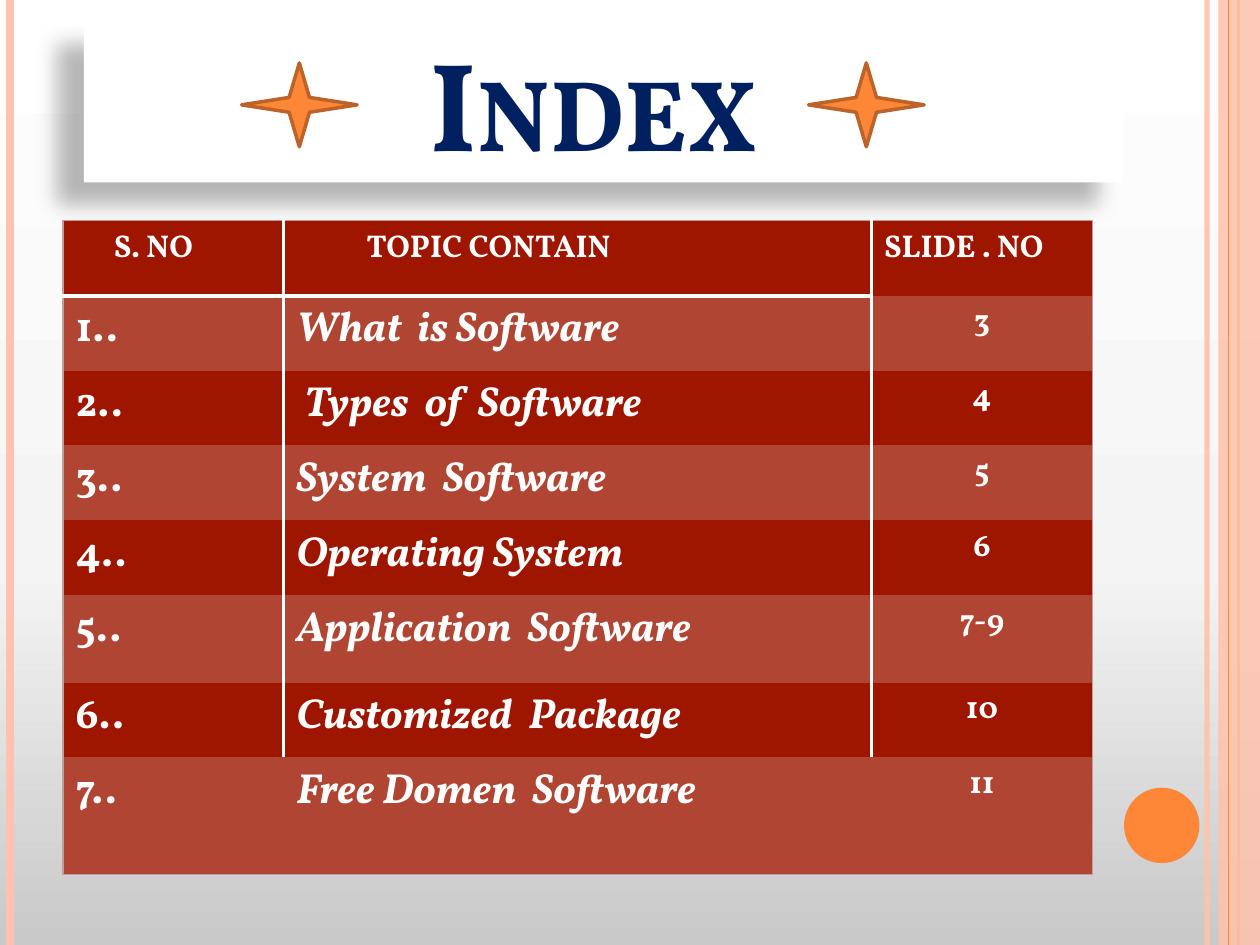
from typing import NamedTuple, Optional

from lxml.etree import SubElement
from pptx import Presentation
from pptx.dml.color import RGBColor
from pptx.enum.shapes import MSO_CONNECTOR, MSO_SHAPE
from pptx.enum.text import MSO_ANCHOR as Anchor, PP_ALIGN as Align
from pptx.oxml.ns import qn
from pptx.util import Cm, Pt

FONT = "Vollkorn"
WHITE = RGBColor(0xFF, 0xFF, 0xFF)
NAVY = RGBColor(0x00, 0x20, 0x60)
PEACH = RGBColor(0xFE, 0xC3, 0xAE)
ORANGE = RGBColor(0xFE, 0x86, 0x37)
BROWN = RGBColor(0xBC, 0x63, 0x29)
DARK_RED = RGBColor(0x9E, 0x16, 0x00)
LIGHT_RED = RGBColor(0xB1, 0x45, 0x33)
ROSE = RGBColor(0xC4, 0x9C, 0x9B)
BACKGROUND_STOPS = [(0, "C9C9C9"), (40, "F4F4F4"), (100, "FFFFFF")]
SLIDE_WIDTH, SLIDE_HEIGHT = 25.4, 19.05


class Rail(NamedTuple):
    x: float
    color: RGBColor
    width: float
    opacity: int = 100


class Box(NamedTuple):
    kind: MSO_SHAPE
    left: float
    top: float
    width: float
    height: float
    fill: RGBColor
    opacity: int = 100
    outline: Optional[RGBColor] = None


class Border(NamedTuple):
    color: RGBColor
    width: float


class Topic(NamedTuple):
    number: str
    title: str
    pages: str


RAILS_BELOW = [Rail(24.33, PEACH, 3, 93), Rail(0.2, PEACH, 4.5), Rail(24.97, ORANGE, 1.5)]
BAND = Box(MSO_SHAPE.RECTANGLE, 24.56, 0, 0.84, SLIDE_HEIGHT, PEACH, 87)
RAIL_ABOVE = Rail(24.77, ORANGE, 0.75)
DISC = Box(MSO_SHAPE.OVAL, 22.66, 15.88, 1.52, 1.52, ORANGE)
TITLE = Box(MSO_SHAPE.RECTANGLE, 1.69, 0.42, 20.96, 3.26, WHITE)
STARS = [Box(MSO_SHAPE.STAR_4_POINT, left, 1.27, 2.33, 1.69, ORANGE, outline=BROWN)
         for left in (4.87, 16.3)]

HEADERS = [("S. NO", 0.77), ("TOPIC CONTAIN", 1.41), ("SLIDE . NO", 0)]
TOPICS = [
    Topic("1..", "What  is Software", "3"),
    Topic("2..", " Types  of  Software", "4"),
    Topic("3..", "System  Software", "5"),
    Topic("4..", "Operating System", "6"),
    Topic("5..", "Application  Software", "7-9"),
    Topic("6..", "Customized  Package", "10"),
    Topic("7..", "Free Domen  Software", "11"),
]
COLUMN_WIDTHS = [4.45, 11.85, 4.45]
ROW_HEIGHTS = [1.51] * 5 + [1.76, 1.51, 2.36]
OUTER = Border(ROSE, 1)
INNER = Border(WHITE, 2)
HEADER_RULE = Border(WHITE, 2.75)


def set_opacity(owner, percent: int) -> None:
    """Make the first solid colour inside an element translucent."""
    if percent < 100:
        color = owner.find(".//" + qn("a:srgbClr"))
        SubElement(color, qn("a:alpha"), val=str(percent * 1000))


def write_text(frame, text: str, *, size: float, color: RGBColor = WHITE,
               italic: bool = False, small_caps: bool = False,
               align: Align = Align.LEFT, indent: float = 0) -> None:
    paragraph = frame.paragraphs[0]
    paragraph.alignment = align
    if indent:
        paragraph._p.get_or_add_pPr().set("marL", str(Cm(indent)))
    run = paragraph.add_run()
    run.text = text
    font = run.font
    font.name, font.size, font.bold, font.italic = FONT, Pt(size), True, italic
    font.color.rgb = color
    if small_caps:
        run._r.get_or_add_rPr().set("cap", "small")


def draw_rail(slide, rail: Rail) -> None:
    line = slide.shapes.add_connector(
        MSO_CONNECTOR.STRAIGHT, Cm(rail.x), Cm(0), Cm(rail.x), Cm(SLIDE_HEIGHT))
    line.line.color.rgb = rail.color
    line.line.width = Pt(rail.width)
    properties = line._element.spPr
    set_opacity(properties, rail.opacity)
    SubElement(properties, qn("a:effectLst"))


def draw_box(slide, box: Box):
    shape = slide.shapes.add_shape(
        box.kind, Cm(box.left), Cm(box.top), Cm(box.width), Cm(box.height))
    shape.shadow.inherit = False
    shape.fill.solid()
    shape.fill.fore_color.rgb = box.fill
    set_opacity(shape._element.spPr, box.opacity)
    if box.outline is None:
        shape.line.fill.background()
    else:
        shape.line.color.rgb = box.outline
        shape.line.width = Pt(2)
    return shape


def paint_background(slide) -> None:
    fill = slide.background.fill
    fill.gradient()
    fill.gradient_angle = 90
    stops = slide._element.find(".//" + qn("a:gsLst"))
    for stop in list(stops):
        stops.remove(stop)
    for position, color in BACKGROUND_STOPS:
        stop = SubElement(stops, qn("a:gs"), pos=str(position * 1000))
        SubElement(stop, qn("a:srgbClr"), val=color)


def draw_title(slide) -> None:
    shape = draw_box(slide, TITLE)
    effects = shape._element.spPr.find(qn("a:effectLst"))
    shadow = SubElement(effects, qn("a:outerShdw"), blurRad=str(Pt(11.8)),
                        dist=str(Pt(19.7)), dir=str(141 * 60000), rotWithShape="0")
    color = SubElement(shadow, qn("a:srgbClr"), val="000000")
    SubElement(color, qn("a:alpha"), val="28000")
    frame = shape.text_frame
    frame.word_wrap = True
    frame.vertical_anchor = Anchor.BOTTOM
    write_text(frame, "Index ", size=72, color=NAVY, small_caps=True, align=Align.CENTER)


def style_cell(cell, fill: RGBColor, borders: dict[str, Optional[Border]]) -> None:
    properties = cell._tc.get_or_add_tcPr()
    for side in ("L", "R", "T", "B"):
        border = borders.get(side)
        line = SubElement(properties, qn(f"a:ln{side}"))
        if border is None:
            SubElement(line, qn("a:noFill"))
        else:
            line.set("w", str(Pt(border.width)))
            solid = SubElement(line, qn("a:solidFill"))
            SubElement(solid, qn("a:srgbClr"), val=str(border.color))
    cell.fill.solid()
    cell.fill.fore_color.rgb = fill


def draw_table(slide) -> None:
    rows, columns = len(ROW_HEIGHTS), len(COLUMN_WIDTHS)
    table = slide.shapes.add_table(rows, columns, Cm(1.27), Cm(4.45),
                                   Cm(sum(COLUMN_WIDTHS)), Cm(sum(ROW_HEIGHTS))).table
    for column, width in zip(table.columns, COLUMN_WIDTHS):
        column.width = Cm(width)
    for row, height in zip(table.rows, ROW_HEIGHTS):
        row.height = Cm(height)

    # Wording
    for column, (text, indent) in enumerate(HEADERS):
        write_text(table.cell(0, column).text_frame, text, size=18, indent=indent)
    for row, topic in enumerate(TOPICS, start=1):
        number, title, pages = (table.cell(row, column).text_frame for column in range(columns))
        write_text(number, topic.number, size=24)
        write_text(title, topic.title, size=24, italic=True)
        write_text(pages, topic.pages, size=18, align=Align.CENTER)

    # Fills and rules: no dividers in the last row, no header rule in the last column
    for row in range(rows):
        divider = INNER if row < rows - 1 else None
        for column in range(columns):
            rule = HEADER_RULE if column < columns - 1 else None
            style_cell(table.cell(row, column), LIGHT_RED if row % 2 else DARK_RED, {
                "L": OUTER if column == 0 else divider,
                "R": OUTER if column == columns - 1 else divider,
                "T": {0: OUTER, 1: rule}.get(row),
                "B": {0: rule, rows - 1: OUTER}.get(row),
            })


def main() -> None:
    presentation = Presentation()
    presentation.slide_width, presentation.slide_height = Cm(SLIDE_WIDTH), Cm(SLIDE_HEIGHT)
    slide = presentation.slides.add_slide(presentation.slide_layouts[6])

    # Backdrop
    paint_background(slide)
    for rail in RAILS_BELOW:
        draw_rail(slide, rail)
    draw_box(slide, BAND)
    draw_rail(slide, RAIL_ABOVE)
    draw_box(slide, DISC)

    # Content
    draw_title(slide)
    draw_table(slide)
    for star in STARS:
        draw_box(slide, star)

    presentation.save("out.pptx")


if __name__ == "__main__":
    main()
